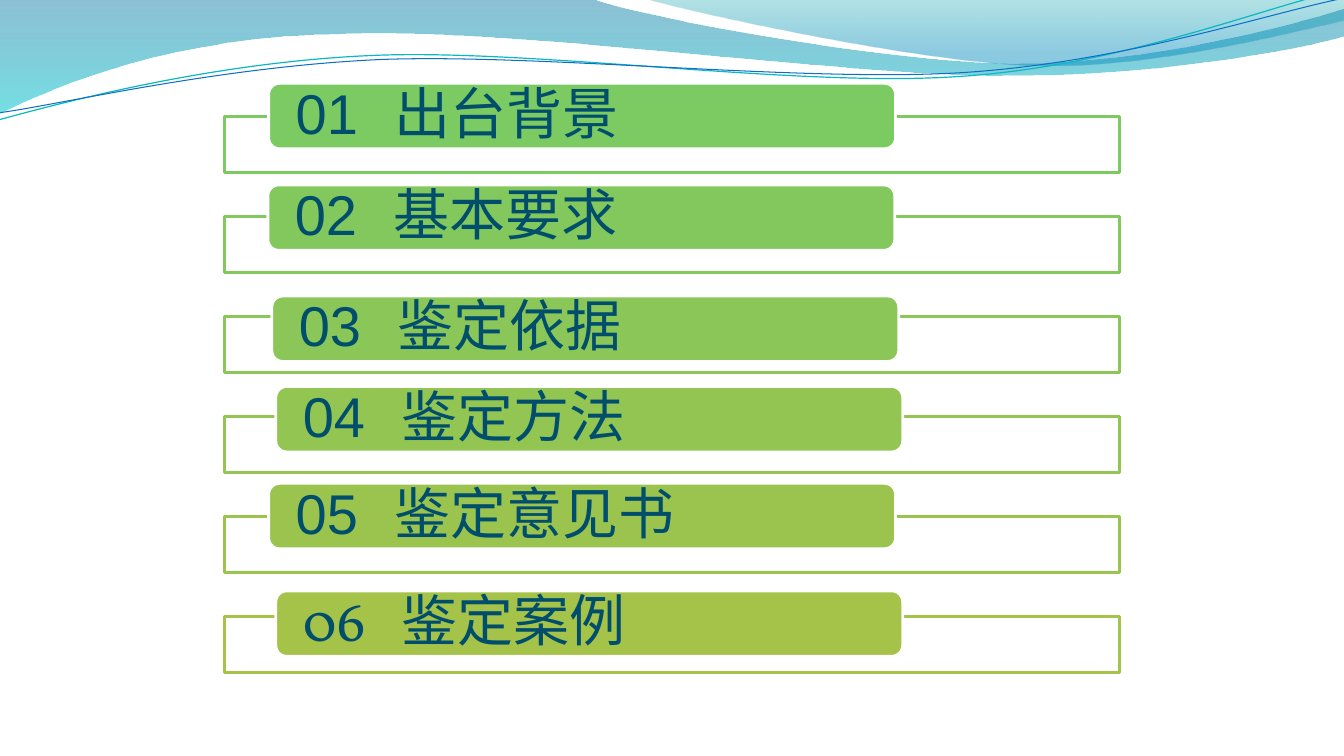
from collections import namedtuple
from dataclasses import dataclass

from pptx import Presentation
from pptx.dml.color import RGBColor
from pptx.enum.shapes import MSO_SHAPE as Preset
from pptx.enum.text import MSO_ANCHOR as Anchor, PP_ALIGN as Align
from pptx.oxml.ns import qn
from pptx.oxml.xmlchemy import OxmlElement
from pptx.util import Cm, Pt

Box = namedtuple("Box", "left top width height")
Stop = namedtuple("Stop", "position color opacity")
Entry = namedtuple("Entry", "number title color shift rise number_font")


@dataclass(frozen=True)
class Theme:
    text: str = "004E6C"
    paper: str = "FFFFFF"
    teal_line: str = "0AB8BF"
    blue_line: str = "0F6FC6"
    wide_wave: tuple = (Stop(0, "0074A1", 45), Stop(1, "00C6CF", 55))
    right_wave: tuple = (Stop(0, "00A1A9", 30), Stop(0.8, "008BBF", 45))
    digits: str = "Arial"
    body: str = "Vollkorn"
    size: float = 40
    border: float = 2


THEME = Theme()

# Each wave is a start point, then lines (one point) and Bézier curves (three points), in cm.
WIDE_WAVE = [
    (0, 0), [(14.91, -0.03)],
    [(16.1, 0.43), (22.48, 1.6), (25.68, 1.6)],
    [(28.91, 1.6), (32.46, 0.66), (33.86, 0.23)],
    [(33.91, 0.91)],
    [(33.3, 1.12), (29.46, 1.93), (25.25, 1.91)],
    [(21.06, 1.91), (12.93, 0.71), (8.71, 0.86)],
    [(4.37, 0.91), (1.55, 2.11), (-0.03, 2.87)],
]
RIGHT_WAVE = [
    (16.23, -0.03),
    [(17.25, 0.28), (23.09, 1.57), (26.04, 1.65)],
    [(28.98, 1.75), (32.56, 0.81), (33.86, 0.53)],
    [(33.86, 0)],
]
TEAL_LINE = [
    (-0.03, 3.02),
    [(1.63, 2.57), (5.36, 1.57), (9.37, 1.4)],
    [(13.39, 1.22), (20.07, 2.21), (24.13, 1.93)],
    [(28.19, 1.68), (31.8, 0.2), (33.81, -0.25)],
]
BLUE_LINE = [
    (0, 2.84),
    [(1.6, 2.62), (5.54, 1.68), (9.6, 1.5)],
    [(13.64, 1.35), (20.22, 2.08), (24.26, 1.83)],
    [(28.32, 1.57), (31.88, 0.36), (33.88, -0.05)],
]

ENTRIES = [
    Entry("01", "出台背景", "7CCA62", 1.12, 0.84, THEME.digits),
    Entry("02", "基本要求", "83C85D", 1.1, 0.8, THEME.digits),
    Entry("03", "鉴定依据", "8AC758", 1.2, 0.52, THEME.digits),
    Entry("04", "鉴定方法", "93C553", 1.3, 0.76, THEME.digits),
    Entry("05", "鉴定意见书", "9BC44E", 1.12, 0.84, THEME.digits),
    Entry("06", "鉴定案例", "A5C249", 1.3, 0.65, THEME.body),
]


def rgb(color):
    return RGBColor.from_string(color)


def set_opacity(shape, *percents):
    """Give each colour of the shape, in order, its opacity."""
    for color, percent in zip(shape.element.spPr.iter(qn("a:srgbClr")), percents):
        alpha = OxmlElement("a:alpha")
        alpha.set("val", str(percent * 1000))
        color.append(alpha)


def bend(line, points):
    """Turn a straight segment of an outline into a Bézier curve."""
    curve = OxmlElement("a:cubicBezTo")
    for x, y in points:
        point = OxmlElement("a:pt")
        point.set("x", str(x))
        point.set("y", str(y))
        curve.append(point)
    line.getparent().replace(line, curve)


def add_outline(page, box, outline, close):
    def place(point):
        return Cm(box.left + point[0]), Cm(box.top + point[1])

    start, *segments = outline
    builder = page.shapes.build_freeform(*place(start))
    builder.add_line_segments([place(segment[-1]) for segment in segments], close=close)
    shape = builder.convert_to_shape()
    shape.shadow.inherit = False
    for line, segment in zip(list(shape.element.iter(qn("a:lnTo"))), segments):
        if len(segment) == 3:
            bend(line, [(x - shape.left, y - shape.top) for x, y in map(place, segment)])
    return shape


def add_waves(page, box):
    for outline, stops in ((WIDE_WAVE, THEME.wide_wave), (RIGHT_WAVE, THEME.right_wave)):
        wave = add_outline(page, box, outline, close=True)
        wave.line.fill.background()
        wave.fill.gradient()
        wave.fill.gradient_angle = 270
        for target, stop in zip(wave.fill.gradient_stops, stops):
            target.position = stop.position
            target.color.rgb = rgb(stop.color)
        set_opacity(wave, *(stop.opacity for stop in stops))
    for outline, color, width in ((TEAL_LINE, THEME.teal_line, 0.85),
                                  (BLUE_LINE, THEME.blue_line, 0.75)):
        curve = add_outline(page, box, outline, close=False)
        curve.fill.background()
        curve.line.color.rgb = rgb(color)
        curve.line.width = Pt(width)


def add_panel(page, preset, box, fill, line):
    panel = page.shapes.add_shape(preset, *(Cm(length) for length in box))
    panel.shadow.inherit = False
    panel.fill.solid()
    panel.fill.fore_color.rgb = rgb(fill)
    panel.line.color.rgb = rgb(line)
    panel.line.width = Pt(THEME.border)
    return panel


def add_span(para, text, font=THEME.body, size=THEME.size, color=THEME.text):
    span = para.add_run()
    span.text = text
    span.font.name = font
    span.font.size = Pt(size)
    span.font.color.rgb = rgb(color)


def add_tab_stop(para, position):
    stops = OxmlElement("a:tabLst")
    stop = OxmlElement("a:tab")
    stop.set("pos", str(Cm(position)))
    stop.set("algn", "l")
    stops.append(stop)
    para._p.get_or_add_pPr().append(stops)


def add_entry(page, box, entry):
    """Draw one contents line: an open frame with a titled bar on its top edge."""
    frame = add_panel(page, Preset.RECTANGLE, box, THEME.paper, entry.color)
    set_opacity(frame, 90)
    bar_box = Box(box.left + entry.shift, box.top - entry.rise, box.width * 0.7, 1.65)
    bar = add_panel(page, Preset.ROUNDED_RECTANGLE, bar_box, entry.color, THEME.paper)
    text = bar.text_frame
    text.word_wrap = True
    text.vertical_anchor = Anchor.MIDDLE
    text.margin_left = text.margin_right = Cm(0.6)
    text.margin_top = text.margin_bottom = 0
    para = text.paragraphs[0]
    para.alignment = Align.LEFT
    para.line_spacing = 0.9
    add_tab_stop(para, 2.49)
    add_span(para, entry.number + "\t", font=entry.number_font)
    add_span(para, entry.title)


def add_contents(page, box, frame_height=1.4):
    pitch = (box.height - frame_height) / (len(ENTRIES) - 1)
    for row, entry in enumerate(ENTRIES):
        add_entry(page, Box(box.left, box.top + row * pitch, box.width, frame_height), entry)


def main():
    deck = Presentation()
    deck.slide_width, deck.slide_height = Cm(33.87), Cm(19.05)
    page = deck.slides.add_slide(deck.slide_layouts.get_by_name("Blank"))
    add_waves(page, Box(0, 0, 33.87, 3.02))
    add_contents(page, Box(5.65, 2.94, 22.57, 14))
    deck.save("out.pptx")


if __name__ == "__main__":
    main()
